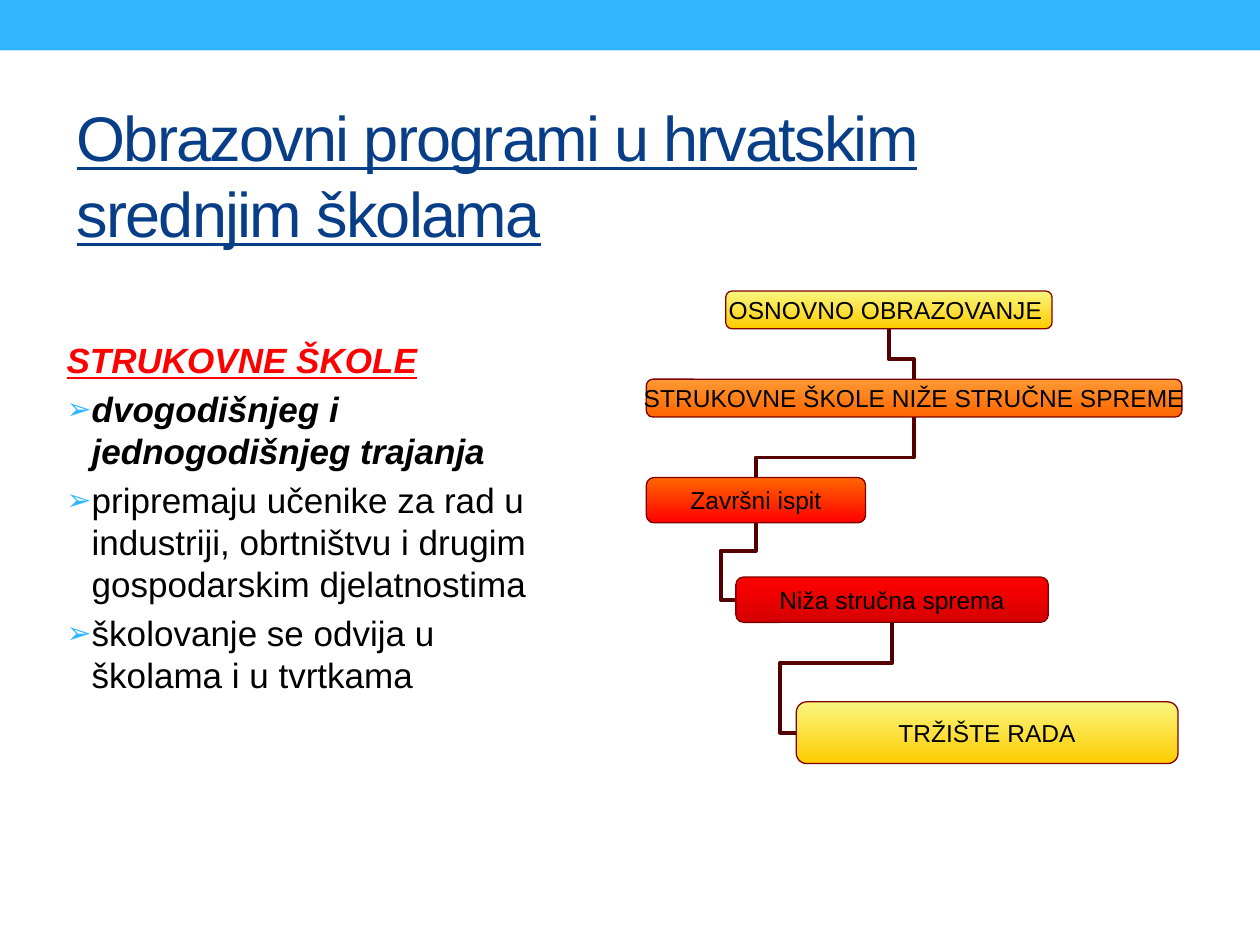
from collections import namedtuple

from lxml.etree import SubElement
from pptx import Presentation
from pptx.dml.color import RGBColor
from pptx.enum.shapes import MSO_CONNECTOR, MSO_SHAPE
from pptx.enum.text import MSO_ANCHOR, PP_ALIGN
from pptx.oxml.ns import qn
from pptx.util import Inches, Pt

COLORS = {
    "band": "31B6FD", "title": "073E87", "heading": "FF0000", "text": "000000",
    "link": "540000", "border": "800000",
    "cream": "F9F67F", "gold": "FFCC00", "apricot": "FF9933",
    "orange": "FF6600", "red": "FF0000", "crimson": "D60000",
}
FONT = "Arial"

Step = namedtuple("Step", "text left top width height top_color bottom_color")
STEPS = [
    Step("OSNOVNO OBRAZOVANJE ", 5.76, 2.31, 2.59, 0.3, "cream", "gold"),
    Step("STRUKOVNE ŠKOLE NIŽE STRUČNE SPREME", 5.13, 3.01, 4.25, 0.3, "apricot", "orange"),
    Step("Završni ispit", 5.13, 3.79, 1.74, 0.36, "orange", "red"),
    Step("Niža stručna sprema", 5.84, 4.58, 2.48, 0.36, "red", "crimson"),
    Step("TRŽIŠTE RADA", 6.32, 5.57, 3.03, 0.49, "cream", "gold"),
]
POINTS = [
    ("dvogodišnjeg i jednogodišnjeg trajanja", True),
    ("pripremaju učenike za rad u industriji, obrtništvu i drugim gospodarskim djelatnostima", False),
    ("školovanje se odvija u školama i u tvrtkama", False),
]


def color(name):
    return RGBColor.from_string(COLORS[name])


def add_span(para, text, size, tint="text", strong=False, underline=False):
    span = para.add_run()
    span.text = text
    font = span.font
    font.name, font.size = FONT, Pt(size)
    font.bold = font.italic = strong
    font.underline = underline
    font.color.rgb = color(tint)
    return span


def add_text_box(page, left, top, width, height, anchor):
    box = page.shapes.add_textbox(Inches(left), Inches(top), Inches(width), Inches(height))
    frame = box.text_frame
    frame.word_wrap = True
    frame.vertical_anchor = anchor
    return frame


def add_band(page, width, height):
    band = page.shapes.add_shape(MSO_SHAPE.RECTANGLE, 0, 0, width, height)
    band.shadow.inherit = False
    band.fill.solid()
    band.fill.fore_color.rgb = color("band")
    band.line.fill.background()


def format_list_para(para, bullet=None):
    para.space_before = Pt(4)
    props = para._p.get_or_add_pPr()
    props.set("marL", str(Inches(0.2)))
    props.set("indent", str(-Inches(0.2)))
    if bullet:
        tint = SubElement(props, qn("a:buClr"))
        SubElement(tint, qn("a:srgbClr"), val=COLORS["band"])
        SubElement(props, qn("a:buSzPct"), val="85000")
        SubElement(props, qn("a:buFont"), typeface=FONT)
        SubElement(props, qn("a:buChar"), char=bullet)


def add_step(group, step):
    box = group.shapes.add_shape(MSO_SHAPE.ROUNDED_RECTANGLE, Inches(step.left),
                                 Inches(step.top), Inches(step.width), Inches(step.height))
    box.shadow.inherit = False
    box.adjustments[0] = 0.17
    box.fill.gradient()
    box.fill.gradient_angle = 270
    for stop, name in zip(box.fill.gradient_stops, (step.top_color, step.bottom_color)):
        stop.color.rgb = color(name)
    box.line.color.rgb = color("border")
    box.line.width = Pt(0.75)
    frame = box.text_frame
    frame.word_wrap = False
    frame.vertical_anchor = MSO_ANCHOR.MIDDLE
    frame.margin_left = frame.margin_right = Inches(0.05)
    frame.margin_top = frame.margin_bottom = Inches(0.02)
    para = frame.paragraphs[0]
    para.alignment = PP_ALIGN.CENTER
    add_span(para, step.text, 14)


def add_elbow(group, start, end, preset, rotation, flipped, adjusts):
    """Bent connector whose frame is given before it is turned."""
    width, height = abs(end[0] - start[0]), abs(end[1] - start[1])
    if rotation in (90, 270):
        width, height = height, width
    left = (start[0] + end[0] - width) / 2
    top = (start[1] + end[1] - height) / 2
    link = group.shapes.add_connector(MSO_CONNECTOR.ELBOW, Inches(left), Inches(top),
                                      Inches(left + width), Inches(top + height))
    link.line.color.rgb = color("link")
    link.line.width = Pt(2.25)
    props = link.element.spPr
    SubElement(props, qn("a:effectLst"))
    frame = props.find(qn("a:xfrm"))
    frame.set("rot", str(rotation * 60000))
    if flipped:
        frame.set("flipH", "1")
    shape = props.find(qn("a:prstGeom"))
    shape.set("prst", preset)
    guides = shape.find(qn("a:avLst"))
    if guides is None:
        guides = SubElement(shape, qn("a:avLst"))
    for number, share in enumerate(adjusts, 1):
        name = "adj" if preset == "bentConnector2" else f"adj{number}"
        SubElement(guides, qn("a:gd"), name=name, fmla=f"val {round(share * 100000)}")


def bottom_middle(step):
    return step.left + step.width / 2, step.top + step.height


def link_from_top(group, child, parent, rise):
    start, end = (child.left + child.width / 2, child.top), bottom_middle(parent)
    leftward = end[0] < start[0]
    add_elbow(group, start, end, "bentConnector3", 90 if leftward else 270, leftward,
              [rise / (start[1] - end[1])])


def link_from_side(group, child, parent, reach, drop):
    start, end = (child.left, child.top + child.height / 2), bottom_middle(parent)
    add_elbow(group, start, end, "bentConnector4", 180, True,
              [-reach / (end[0] - start[0]), 1 - drop / (start[1] - end[1])])


def main():
    deck = Presentation()
    deck.slide_width, deck.slide_height = Inches(10), Inches(7.5)
    page = deck.slides.add_slide(deck.slide_layouts[6])

    # Top band and title
    add_band(page, deck.slide_width, Inches(0.4))
    title = add_text_box(page, 0.51, 0.76, 8.67, 1.25, MSO_ANCHOR.MIDDLE)
    span = add_span(title.paragraphs[0], "Obrazovni programi u hrvatskim srednjim školama",
                    36, "title", underline=True)
    span.font._element.set("spc", "-100")

    # Heading and bulleted points
    body = add_text_box(page, 0.43, 2.64, 4.16, 4.07, MSO_ANCHOR.TOP)
    heading = body.paragraphs[0]
    format_list_para(heading)
    add_span(heading, "STRUKOVNE ŠKOLE", 20, "heading", strong=True, underline=True)
    for text, strong in POINTS:
        para = body.add_paragraph()
        format_list_para(para, "➢")
        add_span(para, text, 20, strong=strong)

    # Education path: links behind, steps in front
    group = page.shapes.add_group_shape()
    primary, vocational, exam, qualification, market = STEPS
    link_from_side(group, market, qualification, 0.13, 0.32)
    link_from_side(group, qualification, exam, 0.12, 0.22)
    link_from_top(group, exam, vocational, 0.16)
    link_from_top(group, vocational, primary, 0.16)
    for step in STEPS:
        add_step(group, step)

    deck.save("out.pptx")


if __name__ == "__main__":
    main()
